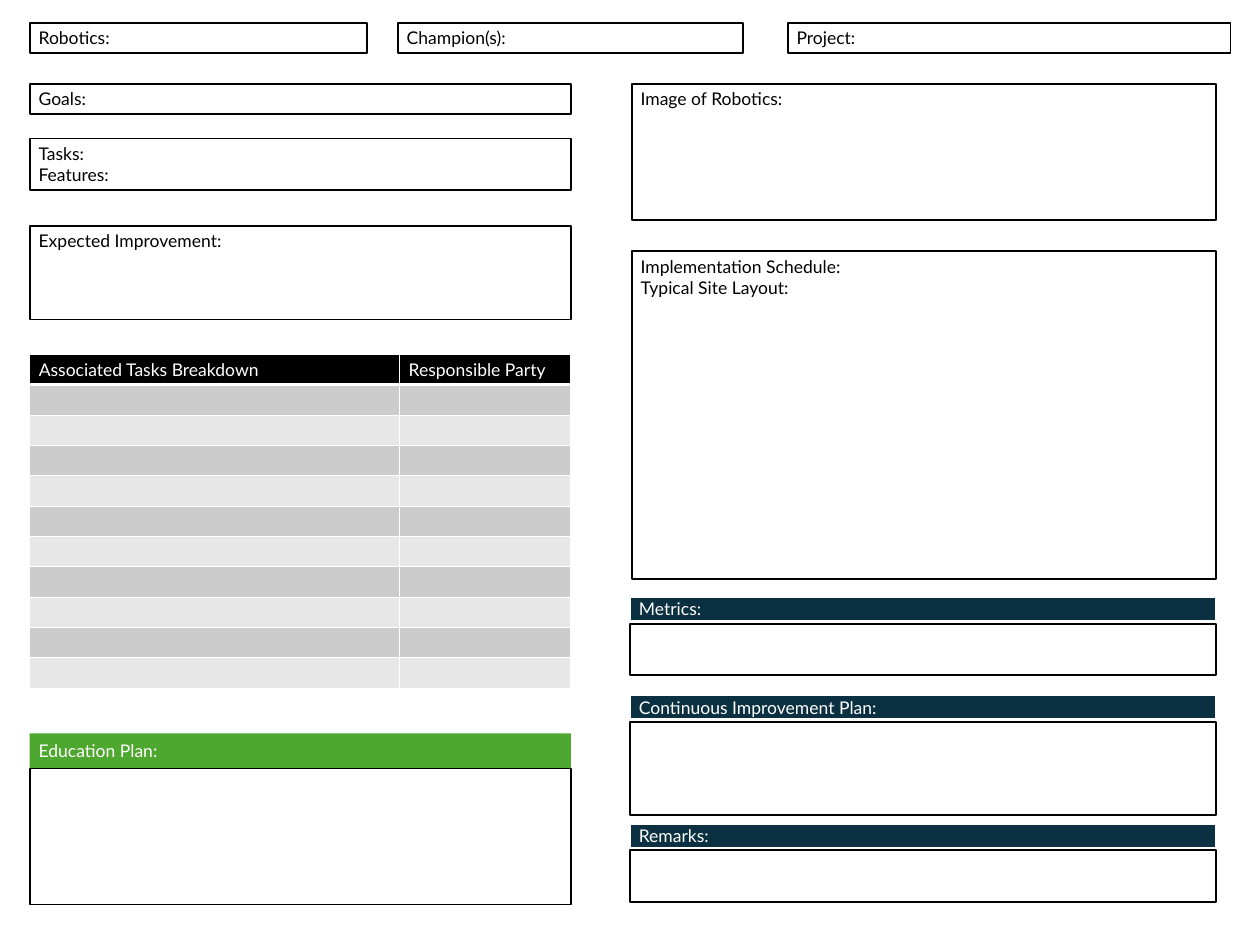
from dataclasses import dataclass
from typing import Any

from lxml.etree import SubElement
from pptx import Presentation
from pptx.dml.color import RGBColor
from pptx.enum.shapes import MSO_SHAPE
from pptx.enum.text import MSO_ANCHOR, PP_ALIGN
from pptx.oxml.ns import qn
from pptx.util import Cm, Pt


def colour(hex_code):
    return RGBColor.from_string(hex_code)


@dataclass
class Board:
    """Holds the style and the slide of a robotics planning board."""
    slide: Any
    font: str = "Lato"
    size: int = 14
    ink: str = "000000"
    paper: str = "FFFFFF"
    navy: str = "0B3041"
    green: str = "4EA72E"
    bands: tuple = ("CCCCCC", "E7E7E7")

    def label(self, frame, lines, ink):
        formats = {"name": self.font, "size": Pt(self.size), "bold": False}
        for index, line in enumerate(lines):
            paragraph = frame.add_paragraph() if index else frame.paragraphs[0]
            paragraph.alignment = PP_ALIGN.LEFT
            run = paragraph.add_run()
            run.text = line
            for key, value in formats.items():
                setattr(run.font, key, value)
            run.font.color.rgb = colour(ink)

    def panel(self, place, lines=(), fill=None, line=None, weight=1.5,
              ink=None, anchor=MSO_ANCHOR.TOP):
        panel = self.slide.shapes.add_shape(
            MSO_SHAPE.RECTANGLE, *(Cm(length) for length in place))
        panel.shadow.inherit = False
        if fill:
            panel.fill.solid()
            panel.fill.fore_color.rgb = colour(fill)
        else:
            panel.fill.background()
        if line:
            panel.line.color.rgb = colour(line)
            panel.line.width = Pt(weight)
        else:
            panel.line.fill.background()
        for key, value in {"word_wrap": True, "vertical_anchor": anchor}.items():
            setattr(panel.text_frame, key, value)
        self.label(panel.text_frame, lines, ink or self.ink)

    def box(self, place, *lines, fill=None):
        self.panel(place, lines, fill, self.ink)

    def banner(self, place, title, fill, line=None):
        self.panel(place, [title], fill, line, 2, self.paper, MSO_ANCHOR.MIDDLE)

    def border(self, cell, side, weight):
        edge = SubElement(cell._tc.get_or_add_tcPr(), qn(f"a:ln{side}"),
                          w=str(Pt(weight)))
        solid = SubElement(edge, qn("a:solidFill"))
        SubElement(solid, qn("a:srgbClr"), val=self.paper)

    def task_table(self, left, top, widths, row_height, headings, row_count):
        table = self.slide.shapes.add_table(
            row_count, len(widths), Cm(left), Cm(top),
            Cm(sum(widths)), Cm(row_height * row_count)).table
        for column, width in zip(table.columns, widths):
            column.width = Cm(width)
        for index, row in enumerate(table.rows):
            row.height = Cm(row_height)
            for cell, heading in zip(row.cells, headings):
                for side in "LRTB":
                    heavy = (index, side) in ((0, "B"), (1, "T"))
                    self.border(cell, side, 3 if heavy else 1)
                cell.fill.solid()
                if index:
                    cell.fill.fore_color.rgb = colour(self.bands[(index - 1) % 2])
                    SubElement(cell.text_frame.paragraphs[0]._p,
                               qn("a:endParaRPr"), sz=str(self.size * 100))
                else:
                    cell.fill.fore_color.rgb = colour(self.ink)
                    self.label(cell.text_frame, [heading], self.paper)


def main():
    deck = Presentation()
    deck.slide_width, deck.slide_height = Cm(35.56), Cm(26.67)
    board = Board(deck.slides.add_slide(deck.slide_layouts[6]))

    for left, width, heading in ((0.84, 9.53, "Robotics:"),
                                 (11.23, 9.73, "Champion(s):"),
                                 (22.23, 12.5, "Project:")):
        board.box((left, 0.64, width, 0.86), heading, fill=board.paper)

    goals_left, goals_width = 0.84, 15.27
    for top, height, lines in ((2.36, 0.86, ["Goals:"]),
                               (3.91, 1.45, ["Tasks:", "Features:"]),
                               (6.38, 2.64, ["Expected Improvement:"])):
        board.box((goals_left, top, goals_width, height), *lines)
    board.task_table(goals_left, 10.01, (10.44, 4.83), 0.85,
                     ("Associated Tasks Breakdown", "Responsible Party"), 11)
    board.banner((goals_left, 20.7, goals_width, 0.97), "Education Plan:",
                 board.green)
    board.box((goals_left, 21.69, goals_width, 3.84))

    for top, height, lines in (
            (2.36, 3.84, ["Image of Robotics:"]),
            (7.09, 9.25, ["Implementation Schedule:", "Typical Site Layout:"])):
        board.box((17.83, top, 16.48, height), *lines)

    review_left, review_width = 17.78, 16.54
    for top, height, title in ((16.84, 1.45, "Metrics:"),
                               (19.61, 2.64, "Continuous Improvement Plan:"),
                               (23.24, 1.45, "Remarks:")):
        board.banner((review_left, top, review_width, 0.69), title,
                     board.navy, board.paper)
        board.box((review_left, top + 0.76, review_width, height))

    deck.save("out.pptx")


if __name__ == "__main__":
    main()
